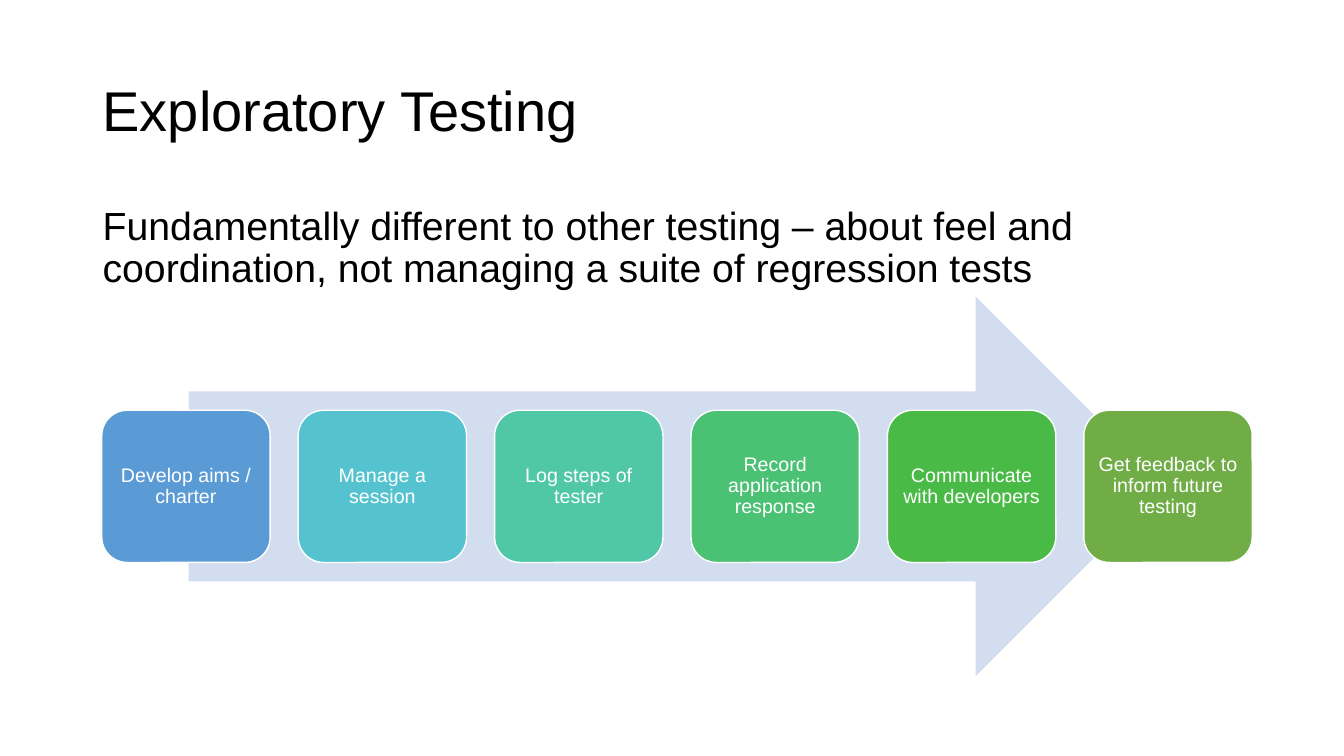
from pptx import Presentation
from pptx.dml.color import RGBColor as Rgb
from pptx.enum.shapes import MSO_SHAPE as Kind
from pptx.enum.text import MSO_ANCHOR as Anchor, PP_ALIGN as Align
from pptx.util import Inches, Pt

COLORS = {
    "ink": "000000",
    "paper": "FFFFFF",
    "arrow": "D2DEEF",
    "blue": "5B9BD5",
    "cyan": "55C3CF",
    "teal": "50C8A7",
    "mint": "4BC174",
    "green": "4ABA46",
    "olive": "70AD47",
}

STEPS = [
    ("Develop aims / charter", "blue"),
    ("Manage a session", "cyan"),
    ("Log steps of tester", "teal"),
    ("Record application response", "mint"),
    ("Communicate with developers", "green"),
    ("Get feedback to inform future testing", "olive"),
]


class Deck:
    font = "Arial"
    pad = 0.06

    def __init__(self, slide):
        self.slide = slide

    def color(self, name):
        return Rgb.from_string(COLORS[name])

    def label(self, frame, words, size, color, anchor):
        frame.word_wrap = True
        frame.vertical_anchor = anchor
        frame.text = words
        para = frame.paragraphs[0]
        para.line_spacing = 0.9
        para.font.name = self.font
        para.font.size = Pt(size)
        para.font.color.rgb = self.color(color)
        return para

    def text(self, box, words, size, anchor=Anchor.TOP):
        frame = self.slide.shapes.add_textbox(*map(Inches, box)).text_frame
        return self.label(frame, words, size, "ink", anchor)

    def shape(self, kind, box, fill):
        shape = self.slide.shapes.add_shape(kind, *map(Inches, box))
        shape.shadow.inherit = False
        shape.fill.solid()
        shape.fill.fore_color.rgb = self.color(fill)
        shape.line.fill.background()
        return shape

    def card(self, box, words, fill):
        card = self.shape(Kind.ROUNDED_RECTANGLE, box, fill)
        card.line.color.rgb = self.color("paper")
        card.line.width = Pt(1)
        frame = card.text_frame
        frame.margin_left = frame.margin_right = Inches(self.pad)
        frame.margin_top = frame.margin_bottom = Inches(self.pad)
        para = self.label(frame, words, 14, "paper", Anchor.MIDDLE)
        para.alignment = Align.CENTER


def main():
    show = Presentation()
    show.slide_width = Inches(13.33)
    show.slide_height = Inches(7.5)
    deck = Deck(show.slides.add_slide(show.slide_layouts[6]))

    deck.text((0.92, 0.4, 11.5, 1.45), "Exploratory Testing", 40, Anchor.MIDDLE)
    intro = deck.text(
        (0.92, 2, 11.5, 4.76),
        "Fundamentally different to other testing – about feel and "
        "coordination, not managing a suite of regression tests",
        28,
    )
    intro.space_before = Pt(10)

    deck.shape(Kind.RIGHT_ARROW, (1.87, 2.94, 9.69, 3.77), "arrow")

    left, wide, last = 1.01, 1.67, 10.75
    pitch = (last - left) / (len(STEPS) - 1)
    for i, (words, fill) in enumerate(STEPS):
        deck.card((left + i * pitch, 4.07, wide, 1.51), words, fill)

    show.save("out.pptx")


if __name__ == "__main__":
    main()
